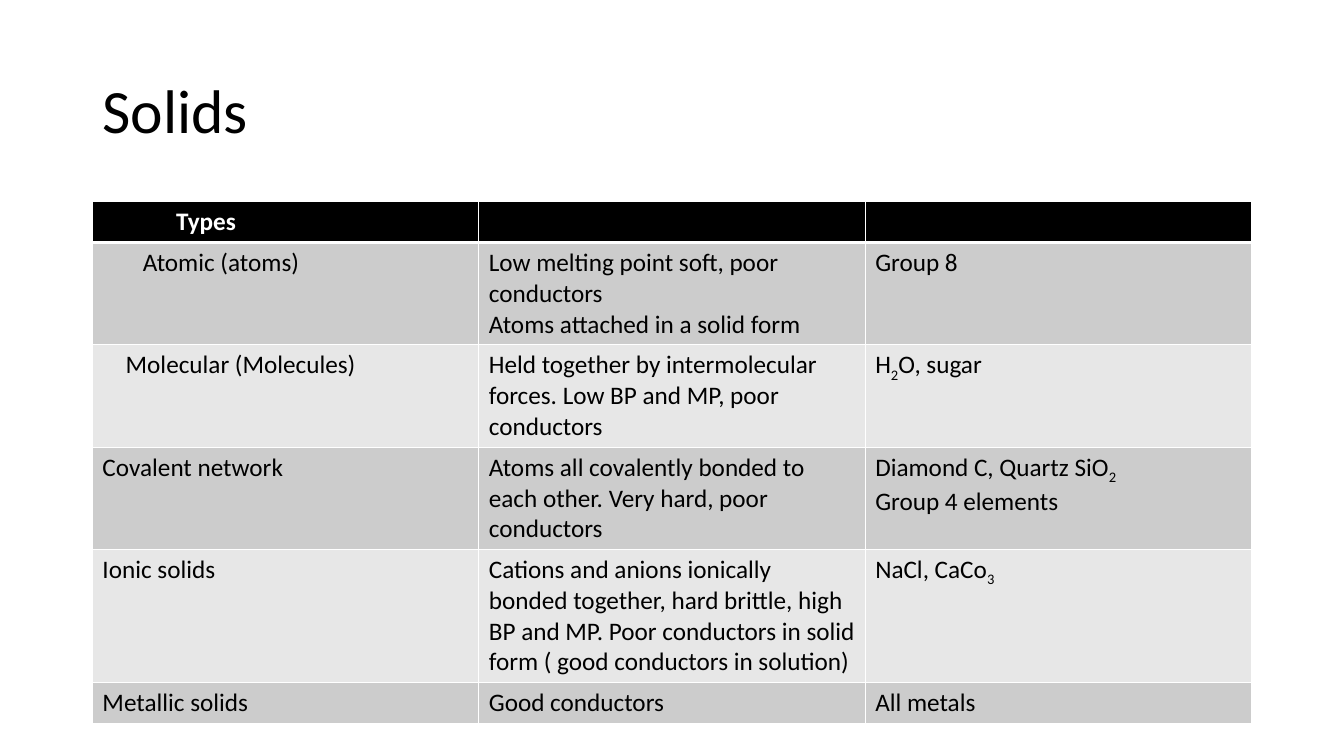
import pptx
import pptx.dml.color
import pptx.enum.text
import pptx.oxml
import pptx.oxml.ns
import pptx.util

BLACK = pptx.dml.color.RGBColor(0x00, 0x00, 0x00)
WHITE = pptx.dml.color.RGBColor(0xFF, 0xFF, 0xFF)
DARK_BAND = pptx.dml.color.RGBColor(0xCC, 0xCC, 0xCC)
LIGHT_BAND = pptx.dml.color.RGBColor(0xE7, 0xE7, 0xE7)

GRID_COLUMNS, GRID_ROWS = 160, 150
TITLE_ONLY_LAYOUT = 5
LINE_HEIGHT, CELL_PADDING = 0.305, 0.1

# Text between tildes is subscript; a line break starts a new paragraph.
SOLIDS = [
    ["Types", "", ""],
    ["Atomic (atoms)",
     "Low melting point soft, poor conductors\nAtoms attached in a solid form",
     "Group 8"],
    ["Molecular (Molecules)",
     "Held together by intermolecular forces. Low BP and MP, poor conductors",
     "H~2~O, sugar"],
    ["Covalent network",
     "Atoms all covalently bonded to each other. Very hard, poor conductors",
     "Diamond C, Quartz SiO~2~\nGroup 4 elements"],
    ["Ionic solids",
     "Cations and anions ionically bonded together, hard brittle, high BP and MP. "
     "Poor conductors in solid form ( good conductors in solution)",
     "NaCl, CaCo~3~"],
    ["Metallic solids", "Good conductors", "All metals"],
]
LINES_PER_ROW = [1, 3, 3, 3, 4, 1]
FIRST_COLUMN_INDENTS = [0.73, 0.4, 0.23, 0, 0, 0]


class SlideBuilder:
    def __init__(self, deck):
        self.deck = deck
        self.slide = deck.slides.add_slide(deck.slide_layouts[TITLE_ONLY_LAYOUT])
        self.title_format = {"name": "Calibri", "size": pptx.util.Pt(44), "bold": False}
        self.body_format = {"name": "Calibri", "size": pptx.util.Pt(18), "bold": False}
        self.header_format = {**self.body_format, "bold": True}

    def place(self, column, row, columns, rows):
        """Turn grid units into left, top, width and height."""
        unit_width = self.deck.slide_width / GRID_COLUMNS
        unit_height = self.deck.slide_height / GRID_ROWS
        return {"left": round(column * unit_width), "top": round(row * unit_height),
                "width": round(columns * unit_width), "height": round(rows * unit_height)}

    def add_text(self, para, text, style, color):
        for position, piece in enumerate(text.split("~")):
            if not piece:
                continue
            span = para.add_run()
            span.text = piece
            for name, value in style.items():
                setattr(span.font, name, value)
            span.font.color.rgb = color
            if position % 2:
                span._r.get_or_add_rPr().set("baseline", "-25000")

    def title(self, text, **area):
        box = self.slide.shapes.title
        for name, value in self.place(**area).items():
            setattr(box, name, value)
        box.text_frame.vertical_anchor = pptx.enum.text.MSO_ANCHOR.MIDDLE
        para = box.text_frame.paragraphs[0]
        para.alignment = pptx.enum.text.PP_ALIGN.LEFT
        para.line_spacing = 0.9
        self.add_text(para, text, self.title_format, BLACK)

    def borders(self, cell, widths):
        properties = cell._tc.get_or_add_tcPr()
        for position, (side, points) in enumerate(widths.items()):
            line = pptx.oxml.parse_xml(
                f'<a:ln{side} {pptx.oxml.ns.nsdecls("a")} w="{pptx.util.Pt(points)}">'
                f'<a:solidFill><a:srgbClr val="{WHITE}"/></a:solidFill></a:ln{side}>')
            properties.insert(position, line)

    def cell(self, cell, text, row, indent):
        header = row == 0
        cell.fill.solid()
        cell.fill.fore_color.rgb = BLACK if header else DARK_BAND if row % 2 else LIGHT_BAND
        cell.margin_left = pptx.util.Inches(CELL_PADDING + indent)
        self.borders(cell, {"L": 1, "R": 1, "T": 3 if row == 1 else 1, "B": 3 if header else 1})
        style = self.header_format if header else self.body_format
        for position, line in enumerate(text.split("\n")):
            frame = cell.text_frame
            para = frame.add_paragraph() if position else frame.paragraphs[0]
            self.add_text(para, line, style, WHITE if header else BLACK)

    def table(self, records, line_counts, indents, **area):
        table = self.slide.shapes.add_table(
            len(records), len(records[0]), **self.place(**area)).table
        for row, record in enumerate(records):
            height = line_counts[row] * LINE_HEIGHT + CELL_PADDING
            table.rows[row].height = pptx.util.Inches(height)
            for column, text in enumerate(record):
                indent = 0 if column else indents[row]
                self.cell(table.cell(row, column), text, row, indent)


def main():
    deck = pptx.Presentation()
    deck.slide_width = pptx.util.Inches(13.33)
    deck.slide_height = pptx.util.Inches(7.5)
    builder = SlideBuilder(deck)
    builder.title("Solids", column=11, row=8, columns=138, rows=29)
    builder.table(SOLIDS, LINES_PER_ROW, FIRST_COLUMN_INDENTS,
                  column=11, row=40, columns=138, rows=104)
    deck.save("out.pptx")


if __name__ == "__main__":
    main()
